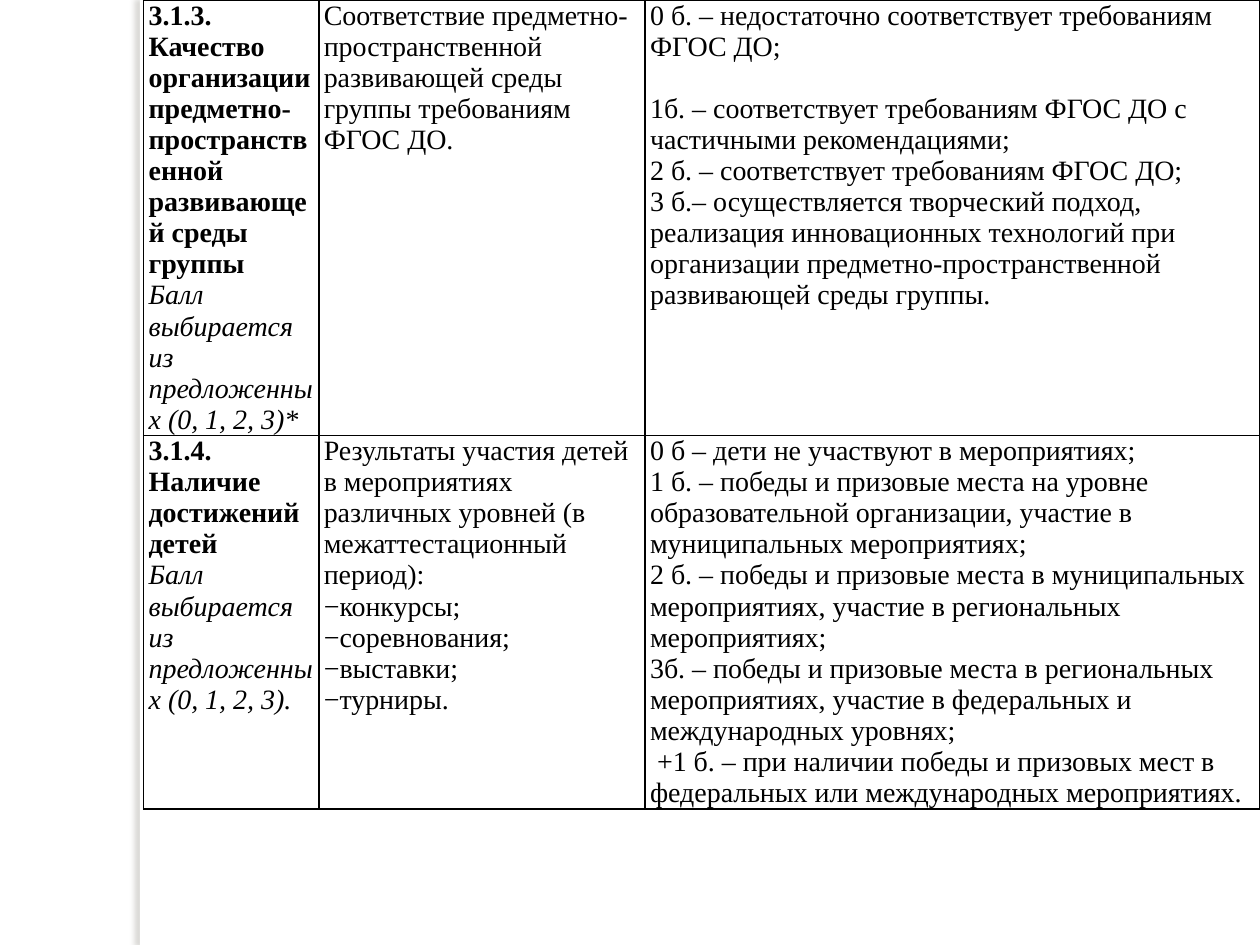
from lxml import etree
from pptx import Presentation, util as u
from pptx.dml.color import RGBColor
from pptx.enum import shapes
from pptx.oxml import parse_xml
from pptx.oxml.ns import nsdecls

FONT, SIZE, INK = "Times New Roman", 16, "000000"
LINE_HEIGHT = 1.11 * SIZE
SLIDE_WIDTH, SLIDE_HEIGHT = 10, 7.5
TABLE_LEFT = 1.14
COLUMNS = [1.39, 2.59, 4.88]
ROWS = [3.45, 2.96]

# Each cell is a list of (style, text) paragraphs.
CRITERIA = [
    [
        [("bold", "3.1.3. Качество организации предметно-пространственной развивающей среды группы"),
         ("italic", "Балл выбирается из предложенных (0, 1, 2, 3)*")],
        [("plain", "Соответствие предметно-пространственной развивающей среды группы требованиям ФГОС ДО.")],
        [("plain", "0 б. – недостаточно соответствует требованиям ФГОС ДО;"),
         ("spaced", "1б. – соответствует требованиям ФГОС ДО с частичными рекомендациями;"),
         ("plain", "2 б. – соответствует требованиям ФГОС ДО;"),
         ("plain", "3 б.– осуществляется творческий подход, реализация инновационных технологий при "
                   "организации предметно-пространственной развивающей среды группы.")],
    ],
    [
        [("bold", "3.1.4. Наличие достижений детей"),
         ("italic", "Балл выбирается из предложенных (0, 1, 2, 3).")],
        [("plain", "Результаты участия детей в мероприятиях различных уровней (в межаттестационный период):"),
         ("bullet", "конкурсы;"),
         ("bullet", "соревнования;"),
         ("bullet", "выставки;"),
         ("bullet", "турниры.")],
        [("plain", "0 б – дети не участвуют в мероприятиях;"),
         ("plain", "1 б. – победы и призовые места на уровне образовательной организации, "
                   "участие в муниципальных мероприятиях;"),
         ("plain", "2 б. – победы и призовые места в муниципальных мероприятиях, "
                   "участие в региональных мероприятиях;"),
         ("plain", "3б. – победы и призовые места в региональных мероприятиях, "
                   "участие в федеральных и международных уровнях;"),
         ("plain", " +1 б. – при наличии победы и призовых мест в федеральных "
                   "или международных мероприятиях.")],
    ],
]


def color(value):
    return RGBColor.from_string(value)


def add_side_strip(slide):
    """White strip whose soft shadow falls to the left."""
    strip = slide.shapes.add_shape(
        shapes.MSO_SHAPE.RECTANGLE, u.Inches(1.11), 0, u.Inches(0.08), u.Inches(SLIDE_HEIGHT))
    strip.fill.solid()
    strip.fill.fore_color.rgb = color("FFFFFF")
    strip.line.fill.background()
    strip.shadow.inherit = False
    effects = strip._element.spPr.find("{*}effectLst")
    effects.append(parse_xml(
        f'<a:outerShdw {nsdecls("a")} blurRad="{u.Pt(3)}" dist="{u.Pt(3)}" dir="10800000" '
        'algn="ctr" rotWithShape="0"><a:srgbClr val="736F63"><a:alpha val="25000"/>'
        '</a:srgbClr></a:outerShdw>'))


def write_paragraph(paragraph, style, content):
    run = paragraph.add_run()
    run.text = content
    for name, value in {"name": FONT, "size": u.Pt(SIZE),
                        "bold": style == "bold", "italic": style == "italic"}.items():
        setattr(run.font, name, value)
    run.font.color.rgb = color(INK)
    if style == "spaced":
        paragraph.space_before = u.Pt(LINE_HEIGHT)
    if style == "bullet":
        properties = paragraph._p.get_or_add_pPr()
        properties.set("marL", "0")
        properties.set("indent", "0")
        properties.append(parse_xml(f'<a:buFont {nsdecls("a")} typeface="{FONT}"/>'))
        properties.append(parse_xml(f'<a:buChar {nsdecls("a")} char="−"/>'))


def add_borders(cell):
    properties = cell._tc.get_or_add_tcPr()
    for index, side in enumerate(("lnL", "lnR", "lnT", "lnB")):
        properties.insert(index, parse_xml(
            f'<a:{side} {nsdecls("a")} w="{u.Pt(1)}"><a:solidFill><a:srgbClr val="{INK}"/>'
            f'</a:solidFill></a:{side}>'))


def fill_cell(cell, paragraphs):
    for name, value in {"margin_left": 0.04, "margin_right": 0.04,
                        "margin_top": 0, "margin_bottom": 0}.items():
        setattr(cell, name, u.Inches(value))
    cell.fill.background()
    add_borders(cell)
    frame = cell.text_frame
    for index, (style, content) in enumerate(paragraphs):
        paragraph = frame.add_paragraph() if index else frame.paragraphs[0]
        write_paragraph(paragraph, style, content)


def add_criteria_table(slide):
    table = slide.shapes.add_table(
        len(ROWS), len(COLUMNS), u.Inches(TABLE_LEFT), 0,
        u.Inches(sum(COLUMNS)), u.Inches(sum(ROWS))).table
    table.first_row = table.horz_banding = False
    for column, width in zip(table.columns, COLUMNS):
        column.width = u.Inches(width)
    for row, height, contents in zip(table.rows, ROWS, CRITERIA):
        row.height = u.Inches(height)
        for cell, paragraphs in zip(row.cells, contents):
            fill_cell(cell, paragraphs)


def main():
    presentation = Presentation()
    presentation.slide_width = u.Inches(SLIDE_WIDTH)
    presentation.slide_height = u.Inches(SLIDE_HEIGHT)
    slide = presentation.slides.add_slide(presentation.slide_layouts[6])
    add_side_strip(slide)
    add_criteria_table(slide)
    presentation.save("out.pptx")


if __name__ == "__main__":
    main()
